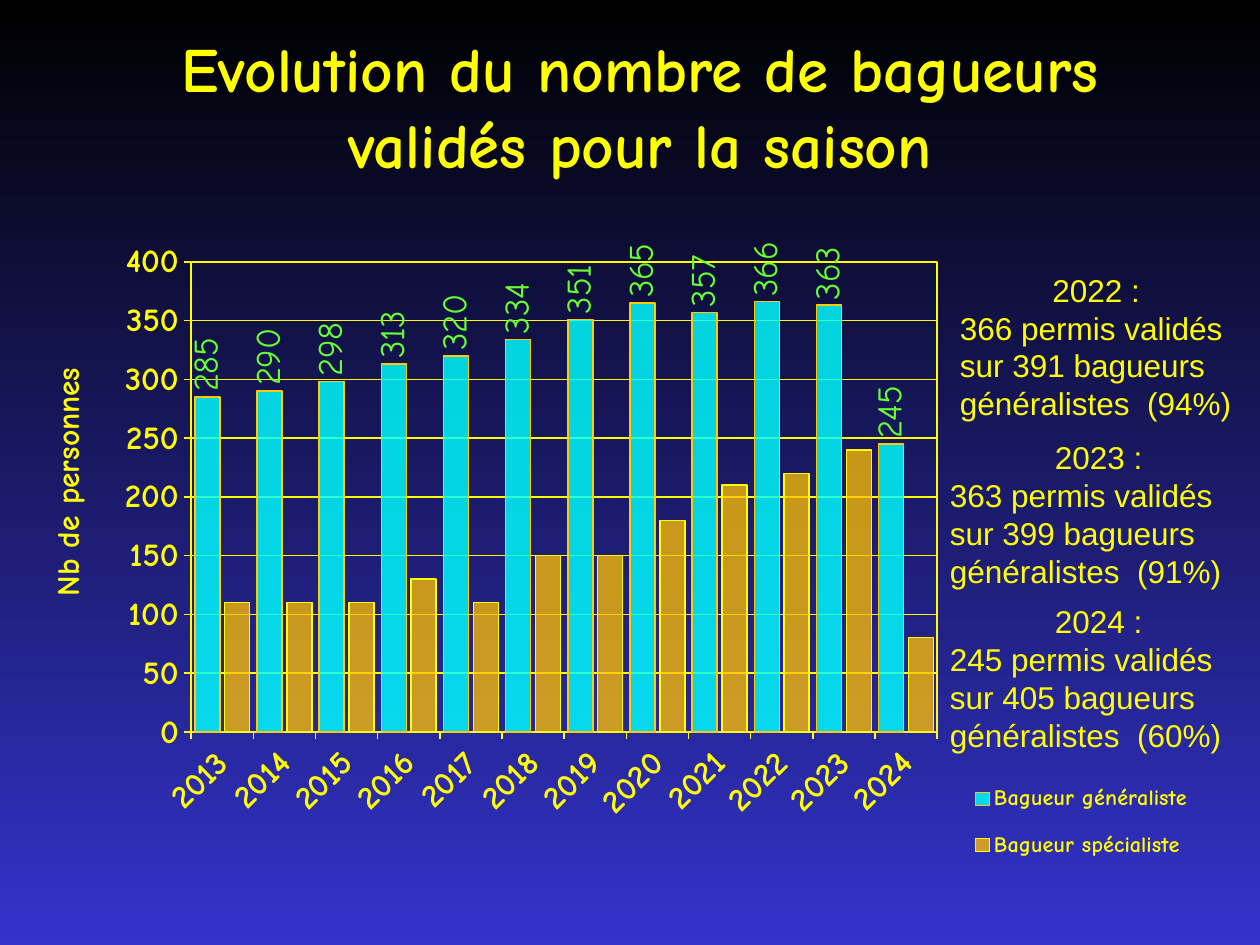
from lxml import etree
from pptx import Presentation
from pptx import util as u
from pptx.chart.data import CategoryChartData
from pptx.dml.color import RGBColor
from pptx.enum import chart as ch, text
from pptx.oxml import parse_xml
from pptx.oxml.ns import nsdecls, qn

YELLOW = "FFFF00"
COMIC = "Comic Neue"
YEARS = [str(y) for y in range(2013, 2025)]
SERIES = [
    ("Bagueur généraliste", [285, 290, 298, 313, 320, 334, 351, 365, 357, 366, 363, 245],
     "00FFFF", 82, "FFCC00"),
    ("Bagueur spécialiste", [110, 110, 110, 130, 110, 150, 150, 180, 210, 220, 240, 80],
     "FFC000", 76, YELLOW),
]
NOTES = [
    (7.52, 2.1, 2.36, "2022 :", "366 permis validés sur 391 bagueurs généralistes  (94%)"),
    (7.44, 3.43, 2.56, "2023 :", "363 permis validés sur 399 bagueurs généralistes  (91%)"),
    (7.44, 4.73, 2.56, "2024 :", "245 permis validés sur 405 bagueurs généralistes  (60%)"),
]


def rgb(value):
    return RGBColor.from_string(value)


def style_font(font, size, color=YELLOW, bold=True, name=COMIC):
    font.size = u.Pt(size)
    font.bold = bold
    font.name = name
    font.color.rgb = rgb(color)


def style_line(line, color=YELLOW):
    line.color.rgb = rgb(color)
    line.width = u.Pt(0.86)


def set_layout(parent, index, x, y, w=None, h=None, inner=False):
    for old in parent.findall(qn("c:layout")):
        parent.remove(old)
    layout = parse_xml(f"<c:layout {nsdecls('c')}><c:manualLayout/></c:layout>")
    values = [("layoutTarget", "inner" if inner else None), ("xMode", "edge"),
              ("yMode", "edge"), ("x", x), ("y", y), ("w", w), ("h", h)]
    for tag, value in values:
        if value is not None:
            etree.SubElement(layout[0], qn(f"c:{tag}")).set("val", str(value))
    parent.insert(index, layout)


def rotate(owner, degrees):
    body = owner._element.find(qn("c:txPr")).find(qn("a:bodyPr"))
    body.set("rot", str(degrees * 60000))
    body.set("vert", "horz")


def add_background(s):
    fill = s.background.fill
    fill.gradient()
    fill.gradient_angle = 270
    for stop, color in zip(fill.gradient_stops, ("000000", "3333CC")):
        stop.color.rgb = rgb(color)


def add_title(s, x, y, w, h):
    sp = s.shapes.title
    sp.left, sp.top, sp.width, sp.height = map(u.Inches, (x, y, w, h))
    tf = sp.text_frame
    tf.word_wrap = True
    tf.vertical_anchor = text.MSO_ANCHOR.MIDDLE
    p = tf.paragraphs[0]
    p.alignment = text.PP_ALIGN.CENTER
    r = p.add_run()
    r.text = "Evolution du nombre de bagueurs validés pour la saison"
    style_font(r.font, 36)
    r._r.rPr.find(qn("a:solidFill")).addnext(parse_xml(
        f"<a:effectLst {nsdecls('a')}><a:outerShdw dist='35921' dir='2700000'>"
        "<a:srgbClr val='000000'/></a:outerShdw></a:effectLst>"))


def style_axes(chart):
    cat, val = chart.category_axis, chart.value_axis
    for axis in (cat, val):
        style_font(axis.tick_labels.font, 18.7)
        style_line(axis.format.line)
        axis.major_tick_mark = ch.XL_TICK_MARK.OUTSIDE
        axis.minor_tick_mark = ch.XL_TICK_MARK.NONE
    cat.tick_label_position = ch.XL_TICK_LABEL_POSITION.LOW
    rotate(cat, -45)
    val.minimum_scale, val.maximum_scale, val.major_unit = 0, 400, 50
    val.tick_labels.number_format = "#,##0"
    val.tick_labels.number_format_is_linked = False
    val.has_major_gridlines = True
    style_line(val.major_gridlines.format.line)
    tf = val.axis_title.text_frame
    r = tf.paragraphs[0].add_run()
    r.text = "Nb de personnes"
    style_font(r.font, 18)
    body = tf._txBody.find(qn("a:bodyPr"))
    body.set("rot", "-5400000")
    body.set("vert", "horz")
    set_layout(val.axis_title._element, 1, 0.053, 0.22)


def style_series(plot):
    plot.gap_width = 30
    plot.overlap = -20
    plot.vary_by_categories = False
    for series, (_, _, color, alpha, edge) in zip(plot.series, SERIES):
        fill = series.format.fill
        fill.solid()
        fill.fore_color.rgb = rgb(color)
        clr = series._element.find(".//" + qn("a:srgbClr"))
        etree.SubElement(clr, qn("a:alpha")).set("val", str(alpha * 1000))
        style_line(series.format.line, edge)
        series.invert_if_negative = False
    labels = plot.series[0].data_labels
    labels.show_value = True
    labels.position = ch.XL_LABEL_POSITION.OUTSIDE_END
    style_font(labels.font, 19.8, "66FF33", bold=False)
    rotate(labels, -90)


def add_bird_ringer_chart(s, x, y, w, h):
    data = CategoryChartData()
    data.categories = YEARS
    for name, values, *_ in SERIES:
        data.add_series(name, values)
    chart = s.shapes.add_chart(ch.XL_CHART_TYPE.COLUMN_CLUSTERED,
                               *map(u.Inches, (x, y, w, h)), data).chart
    chart.has_title = False
    style_font(chart.font, 19.8, "000000")
    style_axes(chart)
    style_series(chart.plots[0])
    chart.has_legend = True
    legend = chart.legend
    legend.position = ch.XL_LEGEND_POSITION.RIGHT
    legend.include_in_layout = False
    style_font(legend.font, 12.6)
    set_layout(legend._element, 1, 0.79, 0.82, 0.2, 0.17)
    area = chart._chartSpace.chart.plotArea
    set_layout(area, 0, 0.174, 0.071, 0.6, 0.7, inner=True)
    area.append(parse_xml(
        f"<c:spPr {nsdecls('c', 'a')}><a:noFill/><a:ln w='10922'><a:solidFill>"
        f"<a:srgbClr val='{YELLOW}'/></a:solidFill></a:ln></c:spPr>"))


def add_note(s, x, y, w, h, heading, detail):
    tf = s.shapes.add_textbox(*map(u.Inches, (x, y, w, h))).text_frame
    tf.word_wrap = True
    tf.auto_size = text.MSO_AUTO_SIZE.SHAPE_TO_FIT_TEXT
    lines = ((tf.paragraphs[0], heading, text.PP_ALIGN.CENTER),
             (tf.add_paragraph(), detail, text.PP_ALIGN.LEFT))
    for p, words, align in lines:
        p.alignment = align
        r = p.add_run()
        r.text = words
        style_font(r.font, 18, bold=False, name="Arial")


def main():
    prs = Presentation()
    prs.slide_width, prs.slide_height = u.Inches(10), u.Inches(7.5)
    s = prs.slides.add_slide(prs.slide_layouts[5])
    add_background(s)
    add_title(s, 0.83, 0.21, 8.5, 1.25)
    add_bird_ringer_chart(s, -0.2, 1.7, 9.87, 5.33)
    for x, y, w, heading, detail in NOTES:
        add_note(s, x, y, w, 1.31, heading, detail)
    prs.save("out.pptx")


if __name__ == "__main__":
    main()
